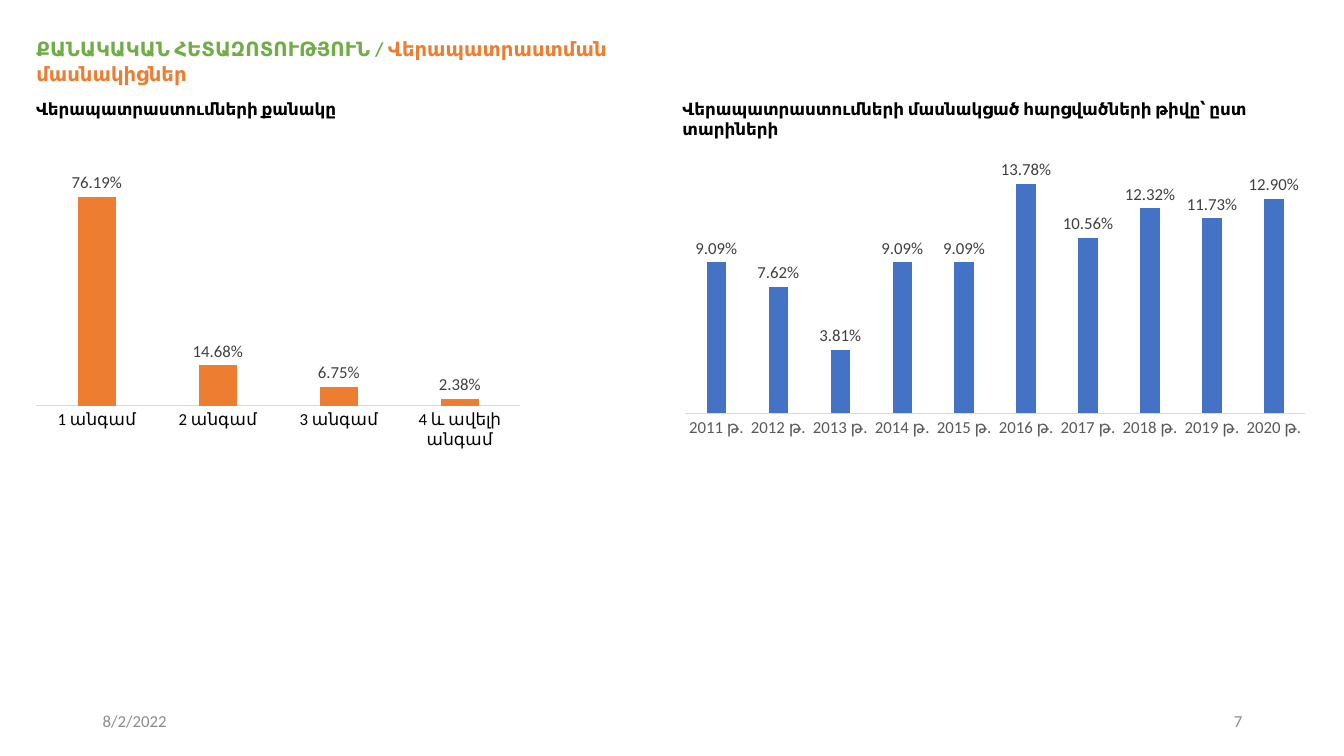
from lxml import etree
from pptx import Presentation
from pptx.chart.data import CategoryChartData
from pptx.dml.color import RGBColor
from pptx.enum.chart import XL_CHART_TYPE, XL_LABEL_POSITION, XL_TICK_MARK
from pptx.enum.text import MSO_ANCHOR, MSO_AUTO_SIZE, PP_ALIGN
from pptx.util import Inches, Pt

COLUMN = XL_CHART_TYPE.COLUMN_CLUSTERED
OUTSIDE_END = XL_LABEL_POSITION.OUTSIDE_END
NO_TICK = XL_TICK_MARK.NONE
TOP, MIDDLE = MSO_ANCHOR.TOP, MSO_ANCHOR.MIDDLE
GROW, FIXED = MSO_AUTO_SIZE.SHAPE_TO_FIT_TEXT, MSO_AUTO_SIZE.NONE
LEFT, RIGHT = PP_ALIGN.LEFT, PP_ALIGN.RIGHT

FONT = "Calibri"
BLACK, GREEN, ORANGE, BLUE = "000000", "70AD47", "ED7D31", "4472C4"
LABEL_GREY, AXIS_GREY, FOOTER_GREY, LINE_GREY = "404040", "595959", "8C8C8C", "D9D9D9"
PERCENT = "0.00%"

LEFT_X, RIGHT_X = 0.26, 6.67
CAPTION_Y, FOOTER_Y = 0.93, 6.95

TRAINING_COUNTS = {
    "1 անգամ": 0.7619,
    "2 անգամ": 0.1468,
    "3 անգամ": 0.0675,
    "4 և ավելի անգամ": 0.0238,
}
YEAR_SHARES = [0.0909, 0.0762, 0.0381, 0.0909, 0.0909,
               0.1378, 0.1056, 0.1232, 0.1173, 0.129]


def rgb(value):
    return RGBColor.from_string(value)


def style_font(font, color, size=12, bold=False):
    for name, value in {"name": FONT, "size": Pt(size), "bold": bold}.items():
        setattr(font, name, value)
    font.color.rgb = rgb(color)


def write(sp, runs, size=12, bold=False, align=LEFT, anchor=TOP, fit=GROW):
    """Fill a shape with one paragraph of (text, colour) runs."""
    tf = sp.text_frame
    for name, value in {"word_wrap": True, "auto_size": fit,
                        "vertical_anchor": anchor}.items():
        setattr(tf, name, value)
    p = tf.paragraphs[0]
    p.alignment = align
    for text, color in runs:
        r = p.add_run()
        r.text = text
        style_font(r.font, color, size, bold)
    return p


def add_text(s, box, text, color, **options):
    sp = s.shapes.add_textbox(*map(Inches, box))
    write(sp, [(text, color)], **options)


def add_title(s):
    sp = s.shapes.title
    sp.left, sp.top, sp.width, sp.height = map(Inches, (LEFT_X, 0.3, 7.36, 0.62))
    p = write(sp, [("ՔԱՆԱԿԱԿԱՆ ՀԵՏԱԶՈՏՈՒԹՅՈՒՆ / ", GREEN),
                   ("Վերապատրաստման մասնակիցներ", ORANGE)], size=14, bold=True)
    for name, value in {"line_spacing": 1.07, "space_before": Pt(0),
                        "space_after": Pt(8)}.items():
        setattr(p, name, value)


def add_columns(s, box, shares, color, axis_color, top):
    """Add a column chart of percentages, on a hidden scale from 0 to top."""
    data = CategoryChartData(number_format=PERCENT)
    data.categories = list(shares)
    data.add_series("Series 1", list(shares.values()))
    chart = s.shapes.add_chart(COLUMN, *map(Inches, box), data).chart
    chart.has_legend = chart.has_title = False
    style_font(chart.font, BLACK, 10)

    axis = chart.category_axis
    axis.major_tick_mark = axis.minor_tick_mark = NO_TICK
    style_font(axis.tick_labels.font, axis_color)
    axis.format.line.color.rgb = rgb(LINE_GREY)
    axis.format.line.width = Pt(0.75)
    scale = chart.value_axis
    for name, value in {"visible": False, "has_major_gridlines": False,
                        "minimum_scale": 0, "maximum_scale": top}.items():
        setattr(scale, name, value)
    scale.tick_labels.number_format = PERCENT
    scale.tick_labels.number_format_is_linked = False

    plot = chart.plots[0]
    for name, value in {"gap_width": 219, "overlap": -27,
                        "vary_by_categories": False}.items():
        setattr(plot, name, value)
    series = plot.series[0]
    series.format.fill.solid()
    series.format.fill.fore_color.rgb = rgb(color)
    labels = series.data_labels
    for name, value in {"show_value": True, "position": OUTSIDE_END,
                        "number_format": PERCENT,
                        "number_format_is_linked": False}.items():
        setattr(labels, name, value)
    style_font(labels.font, LABEL_GREY)


def main():
    prs = Presentation()
    prs.slide_width, prs.slide_height = Inches(13.33), Inches(7.5)
    s = prs.slides.add_slide(prs.slide_layouts[5])
    add_title(s)

    add_text(s, (LEFT_X, CAPTION_Y, 3.47, 0.3),
             "Վերապատրաստումների քանակը", BLACK, bold=True)
    add_columns(s, (LEFT_X, 1.52, 5, 3), TRAINING_COUNTS, ORANGE, BLACK, 0.9)

    add_text(s, (RIGHT_X, CAPTION_Y, 6.18, 0.3),
             "Վերապատրաստումների մասնակցած հարցվածների թիվը՝ ըստ տարիների",
             BLACK, bold=True)
    by_year = {f"{year} թ.": share for year, share in enumerate(YEAR_SHARES, 2011)}
    add_columns(s, (RIGHT_X, 1.4, 6.4, 3), by_year, BLUE, AXIS_GREY, 0.16)

    footer = {"anchor": MIDDLE, "fit": FIXED}
    add_text(s, (0.92, FOOTER_Y, 3, 0.4), "8/2/2022", FOOTER_GREY, **footer)
    add_text(s, (9.42, FOOTER_Y, 3, 0.4), "7", FOOTER_GREY, align=RIGHT, **footer)
    prs.save("out.pptx")


if __name__ == "__main__":
    main()
